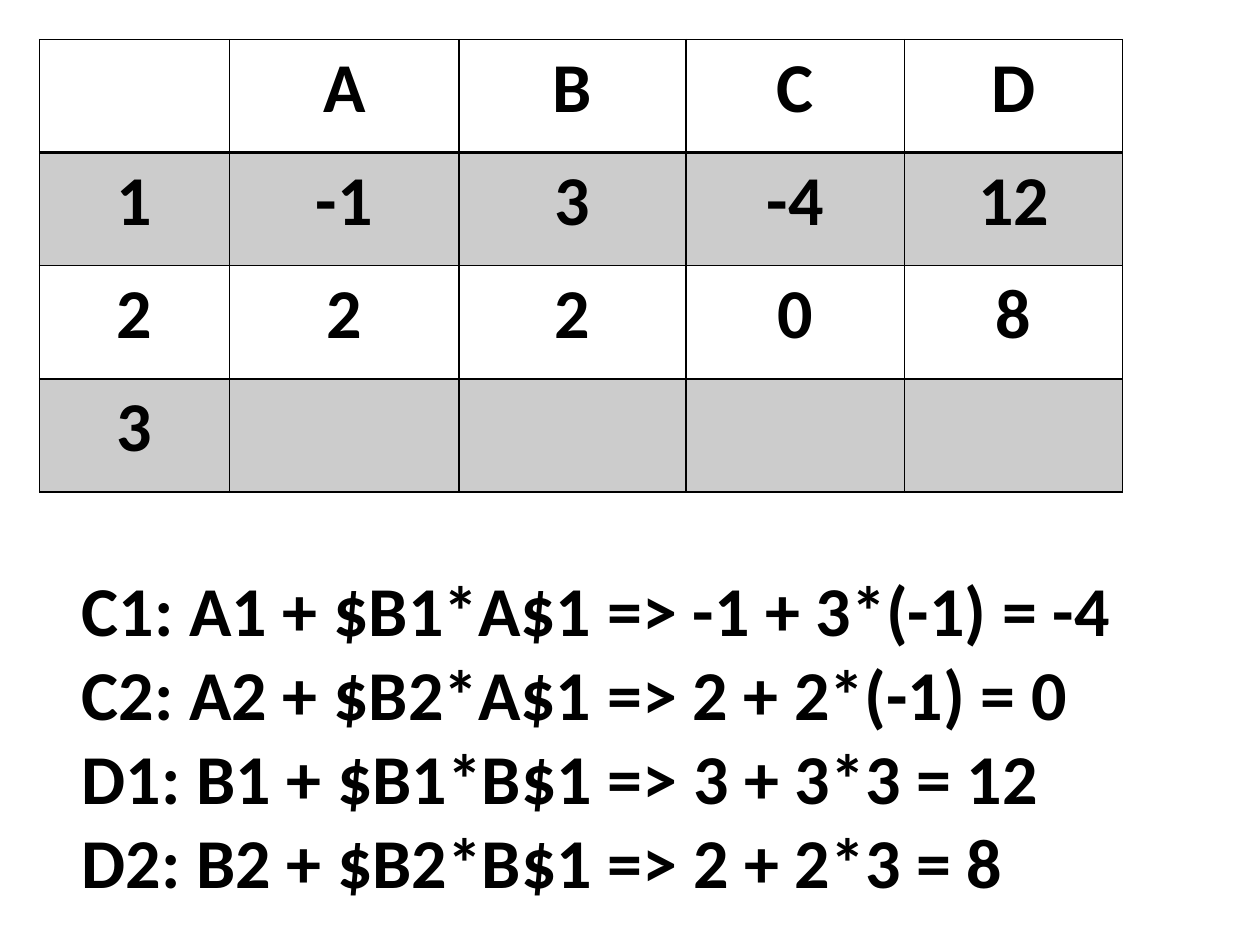
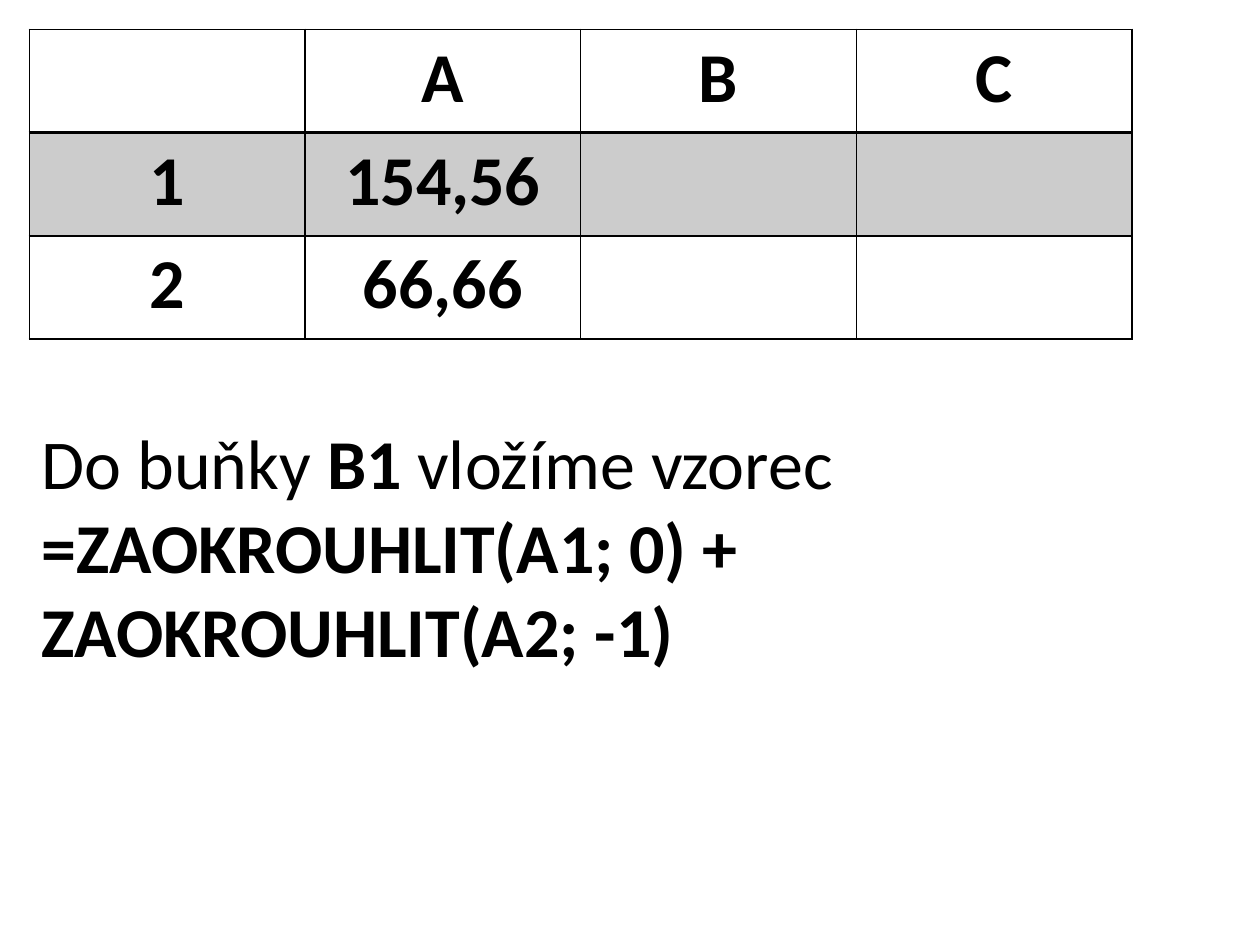
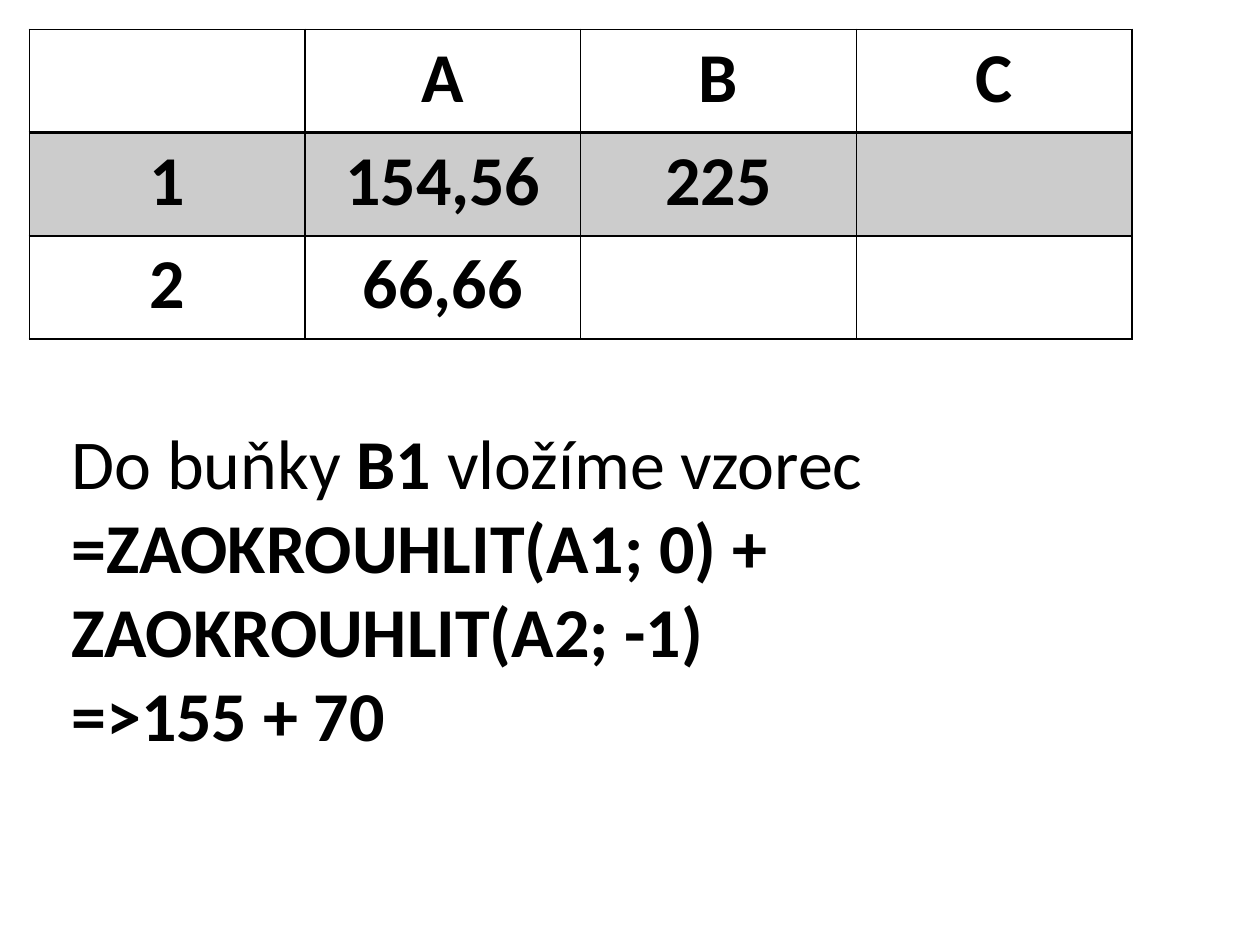
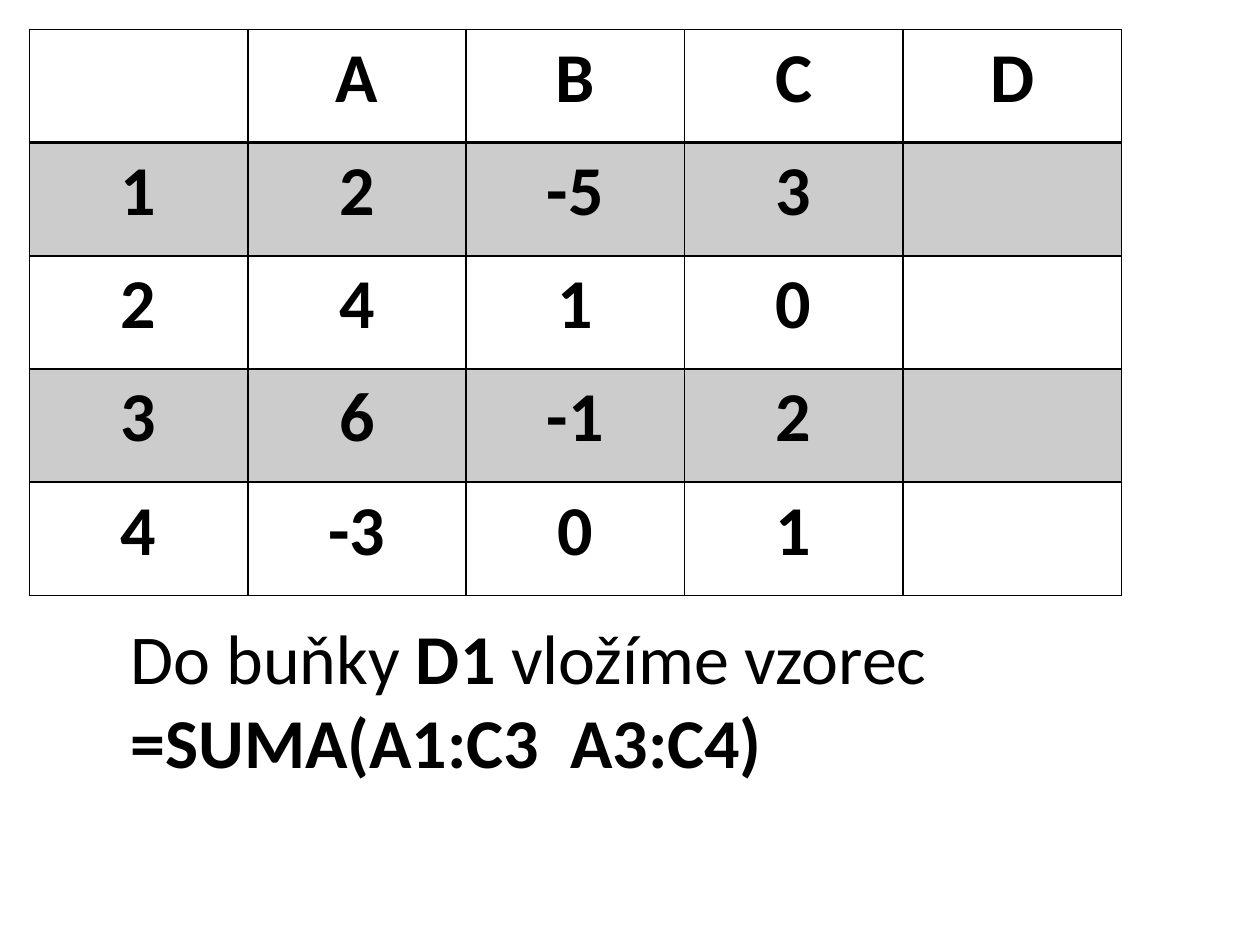
from lxml.etree import SubElement
from pptx import Presentation
from pptx.dml.color import RGBColor
from pptx.enum.text import MSO_AUTO_SIZE as Fit, PP_ALIGN as Align
from pptx.oxml.ns import qn
from pptx.util import Pt

BLACK = RGBColor(0, 0, 0)
FONT, SIZE = "Calibri", 40
THIN, THICK = 1, 2
BAND = 20  # percent of black in the shaded rows


def prompt(cell):
    return [("Do buňky ", False), (cell, True), (" vložíme vzorec", False)]


ROUND = [("=ZAOKROUHLIT(A1; 0) + ZAOKROUHLIT(A2; -1)", True)]

# grid: left, top, column widths, row height, rows
# note: left, top, width, height, paragraphs of (text, bold) runs
SLIDES = [
    {
        "grid": (22.6, 22.6, [108.7, 131, 129.7, 124.8, 124.8], 64.65, [
            ["", "A", "B", "C", "D"],
            ["1", "-1", "3", "-4", "12"],
            ["2", "2", "2", "0", "8"],
            ["3", "", "", "", ""],
        ]),
        "note": (39.6, 320.4, 641.5, 201, [
            [("C1: A1 + $B1*A$1 => -1 + 3*(-1) = -4", True)],
            [("C2: A2 + $B2*A$1 => 2 + 2*(-1) = 0", True)],
            [("D1: B1 + $B1*B$1 => 3 + 3*3 = 12", True)],
            [("D2: B2 + $B2*B$1 => 2 + 2*3 = 8", True)],
        ]),
    },
    {
        "grid": (16.8, 16.8, [157.5] * 4, 59, [
            ["", "A", "B", "C"],
            ["1", "154,56", "", ""],
            ["2", "66,66", "", ""],
        ]),
        "note": (16.8, 236, 658, 152.6, [prompt("B1"), ROUND]),
    },
    {
        "grid": (16.8, 16.8, [157.5] * 4, 59, [
            ["", "A", "B", "C"],
            ["1", "154,56", "225", ""],
            ["2", "66,66", "", ""],
        ]),
        "note": (33.8, 236, 641.5, 201,
                 [prompt("B1"), ROUND, [("=>155 + 70", True)]]),
    },
    {
        "grid": (16.8, 16.8, [124.8] * 5, 64.7, [
            ["", "A", "B", "C", "D"],
            ["1", "2", "-5", "3", ""],
            ["2", "4", "1", "0", ""],
            ["3", "6", "-1", "2", ""],
            ["4", "-3", "0", "1", ""],
        ]),
        "note": (67.7, 347.8, 590.4, 104.4,
                 [prompt("D1"), [("=SUMA(A1:C3  A3:C4)", True)]]),
    },
]


def add_run(para, text, bold):
    run = para.add_run()
    run.text = text
    font = run.font
    font.name, font.size, font.bold = FONT, Pt(SIZE), bold
    font.color.rgb = BLACK


def set_edges(cell, row):
    """Thin edges all round, with a thick rule under the head row."""
    props = cell._tc.get_or_add_tcPr()
    heavy = {0: "lnB", 1: "lnT"}.get(row)
    for tag in ("lnL", "lnR", "lnT", "lnB"):
        width = THICK if tag == heavy else THIN
        line = SubElement(props, qn(f"a:{tag}"), w=str(Pt(width)))
        fill = SubElement(line, qn("a:solidFill"))
        SubElement(fill, qn("a:srgbClr"), val=str(BLACK))


def set_fill(cell, row):
    """Shade the odd rows and leave the others clear."""
    if row % 2 == 0:
        cell.fill.background()
        return
    cell.fill.solid()
    cell.fill.fore_color.rgb = BLACK
    color = cell._tc.tcPr.find(f"{qn('a:solidFill')}/{qn('a:srgbClr')}")
    SubElement(color, qn("a:alpha"), val=str(BAND * 1000))


def add_grid(slide, left, top, widths, height, rows):
    table = slide.shapes.add_table(
        len(rows), len(widths), Pt(left), Pt(top),
        Pt(sum(widths)), Pt(height * len(rows))).table
    table.first_row = table.horz_banding = False
    for col, width in zip(table.columns, widths):
        col.width = Pt(width)
    for r, texts in enumerate(rows):
        table.rows[r].height = Pt(height)
        for c, text in enumerate(texts):
            cell = table.cell(r, c)
            set_edges(cell, r)
            set_fill(cell, r)
            if text:
                para = cell.text_frame.paragraphs[0]
                para.alignment = Align.CENTER
                add_run(para, text, True)


def add_note(slide, left, top, width, height, paras):
    frame = slide.shapes.add_textbox(
        Pt(left), Pt(top), Pt(width), Pt(height)).text_frame
    frame.word_wrap = True
    frame.auto_size = Fit.SHAPE_TO_FIT_TEXT
    for i, runs in enumerate(paras):
        para = frame.add_paragraph() if i else frame.paragraphs[0]
        for text, bold in runs:
            add_run(para, text, bold)


def main():
    deck = Presentation()
    deck.slide_width, deck.slide_height = Pt(720), Pt(540)
    for parts in SLIDES:
        slide = deck.slides.add_slide(deck.slide_layouts[6])
        add_grid(slide, *parts["grid"])
        add_note(slide, *parts["note"])
    deck.save("out.pptx")


if __name__ == "__main__":
    main()
